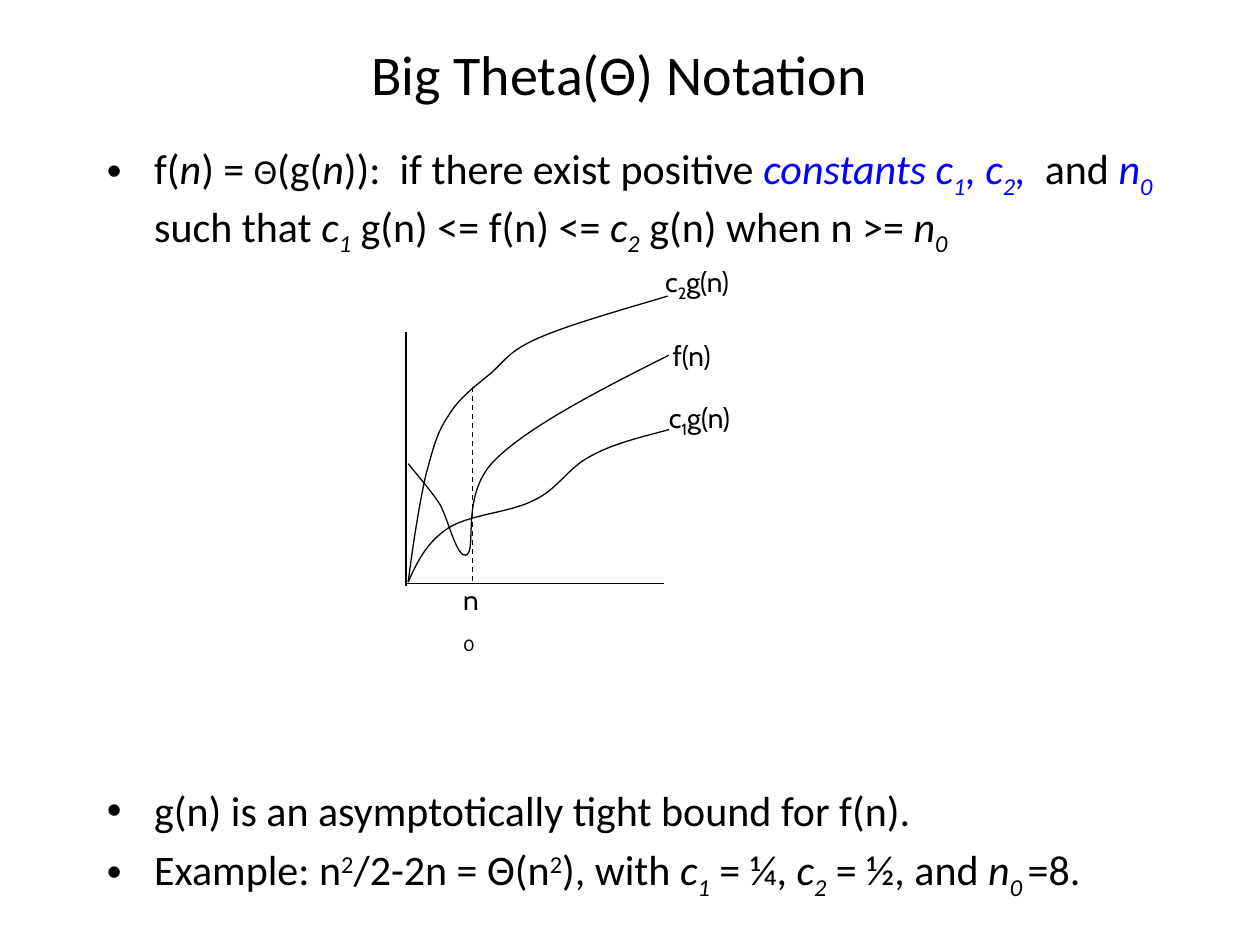
"""Build the Big Theta notation slide with its bounded-growth diagram."""
import dataclasses
import typing

import lxml.etree
import pptx
import pptx.dml.color
import pptx.enum.dml
import pptx.enum.shapes
import pptx.enum.text
import pptx.oxml.ns
import pptx.util

Pt = pptx.util.Pt
Point = tuple[float, float]


@dataclasses.dataclass(frozen=True)
class Theme:
    ink: str = "000000"
    accent: str = "0000FF"
    text_font: str = "Calibri"
    label_font: str = "Cabin"
    title_size: float = 32
    body_size: float = 24
    symbol_size: float = 20
    label_size: float = 16
    line_width: float = 0.75
    bullet_indent: float = 27
    bullet_gap: float = 4.8
    diagram_gap: float = 301.5


THEME = Theme()


class Span(typing.NamedTuple):
    text: str
    italic: bool = False
    baseline: int = 0
    color: str = THEME.ink
    size: float | None = None


class Paragraph(typing.NamedTuple):
    spans: list[Span]
    bulleted: bool = False
    format: dict = {}


class TextBlock(typing.NamedTuple):
    left: float
    top: float
    width: float
    height: float
    paragraphs: list[Paragraph]
    size: float = THEME.label_size
    font: str = THEME.label_font
    format: dict = {"word_wrap": False}


class Segment(typing.NamedTuple):
    start: Point
    end: Point
    dashed: bool = False


def apply_format(target: typing.Any, values: dict) -> None:
    for name, value in values.items():
        setattr(target, name, value)


def rgb(color: str) -> pptx.dml.color.RGBColor:
    return pptx.dml.color.RGBColor.from_string(color)


def constant(name: str, index: str, color: str = THEME.ink) -> list[Span]:
    return [Span(name, True, color=color), Span(index, True, -25, color)]


def label(name: str, index: str, *rest: str) -> list[Paragraph]:
    return [Paragraph([Span(name), Span(index, baseline=-25), *map(Span, rest)])]


def bullet(spans: list[Span], gap: float = THEME.bullet_gap) -> Paragraph:
    return Paragraph(spans, True, {"space_before": Pt(gap)})


def add_bullet(paragraph: typing.Any) -> None:
    properties = paragraph._p.get_or_add_pPr()
    properties.set("marL", str(Pt(THEME.bullet_indent)))
    properties.set("indent", str(-Pt(THEME.bullet_indent)))
    for tag, key, value in (("a:buFont", "typeface", "Arial"), ("a:buChar", "char", "•")):
        lxml.etree.SubElement(properties, pptx.oxml.ns.qn(tag)).set(key, value)


def add_text(slide: typing.Any, block: TextBlock) -> None:
    box = slide.shapes.add_textbox(Pt(block.left), Pt(block.top), Pt(block.width), Pt(block.height))
    frame = box.text_frame
    apply_format(frame, block.format)
    for position, content in enumerate(block.paragraphs):
        paragraph = frame.add_paragraph() if position else frame.paragraphs[0]
        apply_format(paragraph, content.format)
        if content.bulleted:
            add_bullet(paragraph)
        for span in content.spans:
            run = paragraph.add_run()
            run.text = span.text
            apply_format(run.font, {"name": block.font, "size": Pt(span.size or block.size),
                                    "italic": span.italic})
            run.font.color.rgb = rgb(span.color)
            if span.baseline:
                run._r.get_or_add_rPr().set("baseline", str(span.baseline * 1000))


def style_line(line: typing.Any) -> None:
    line.color.rgb = rgb(THEME.ink)
    line.width = Pt(THEME.line_width)


def add_segment(slide: typing.Any, segment: Segment) -> None:
    connector = slide.shapes.add_connector(
        pptx.enum.shapes.MSO_CONNECTOR.STRAIGHT,
        *(Pt(value) for value in segment.start + segment.end))
    style_line(connector.line)
    if segment.dashed:
        connector.line.dash_style = pptx.enum.dml.MSO_LINE.DASH
    lxml.etree.SubElement(connector._element.spPr, pptx.oxml.ns.qn("a:effectLst"))


def add_curve(slide: typing.Any, controls: list[Point]) -> None:
    start, *rest = [(Pt(x), Pt(y)) for x, y in controls]
    builder = slide.shapes.build_freeform(*start)
    builder.add_line_segments(rest, close=False)
    curve = builder.convert_to_shape()
    sides = list(curve._element.iter(pptx.oxml.ns.qn("a:lnTo")))
    for first in range(0, len(sides), 3):
        trio = sides[first:first + 3]
        cubic = lxml.etree.Element(pptx.oxml.ns.qn("a:cubicBezTo"))
        trio[0].addprevious(cubic)
        for side in trio:
            cubic.append(side[0])
            side.getparent().remove(side)
    curve.shadow.inherit = False
    curve.fill.background()
    style_line(curve.line)


DEFINITION = [
    Span("f("), Span("n", True), Span(") = "), Span("Θ", size=THEME.symbol_size),
    Span("(g("), Span("n", True), Span(")):  if there exist positive "),
    *constant("constants c", "1", THEME.accent), *constant(", c", "2", THEME.accent),
    Span(",  ", True, color=THEME.accent), Span("and "),
    *constant("n", "0", THEME.accent), Span(" such that "),
    *constant("c", "1"), Span(" g(n) <= f(n) <= "),
    *constant("c", "2"), Span(" g(n) when n >= "), *constant("n", "0"),
]
TIGHT_BOUND = [Span("g(n) is an asymptotically tight bound for f(n).")]
EXAMPLE = [
    Span("Example: n"), Span("2", baseline=30), Span("/2-2n = Θ(n"),
    Span("2", baseline=30), Span("), with "),
    *constant("c", "1"), Span(" = ¼, "), *constant("c", "2"),
    Span(" = ½, and "), *constant("n", "0 "), Span("=8."),
]

TITLE = TextBlock(
    48, 18, 612, 48,
    [Paragraph([Span("Big Theta(Θ) Notation")],
               format={"alignment": pptx.enum.text.PP_ALIGN.CENTER})],
    THEME.title_size, THEME.text_font,
    {"word_wrap": True, "vertical_anchor": pptx.enum.text.MSO_ANCHOR.MIDDLE})
BODY = TextBlock(
    54, 78, 636, 432,
    [bullet(DEFINITION), bullet(TIGHT_BOUND, THEME.diagram_gap), bullet(EXAMPLE)],
    THEME.body_size, THEME.text_font, {"word_wrap": True})
LABELS = [
    TextBlock(257.5, 329.6, 29, 26.6, label("n", "0"), format={"word_wrap": True}),
    TextBlock(373.7, 190, 46, 26.6, [Paragraph([Span(" f(n)")])]),
    TextBlock(375.1, 225.4, 57.6, 26.6, label("c", "1", "g(n)")),
    TextBlock(373, 147.6, 57.6, 26.6, label("c", "2", "g(n)")),
]

AXES = [
    Segment((232, 189.5), (232, 334.8)),
    Segment((232, 333.5), (379.2, 333.5)),
]
THRESHOLD = Segment((270, 221), (270, 333.5), dashed=True)

LOWER_BOUND = [
    (233.3, 332.6), (238.3, 321.1), (244.1, 309.6), (256.3, 301.7), (268.6, 293.8),
    (291.6, 293), (305.3, 285.8), (319, 279.4), (324.7, 267.1), (337.7, 260.6),
    (350.6, 253.4), (366.5, 249.8), (382.3, 245.5)]
UPPER_BOUND = [
    (233.3, 332.6), (236.2, 309.6), (239.8, 287.3), (243.4, 271.4), (247.7, 255.6),
    (249.8, 247), (256.3, 237.6), (262.1, 227.5), (272.2, 220.3), (280.8, 213.1),
    (289.4, 205.2), (291.6, 200.2), (308.2, 193), (324.7, 185.8), (352.8, 177.8),
    (381.6, 169.2)]
FUNCTION = [
    (233.3, 265), (239, 272.2), (245.5, 279.4), (251.3, 288), (256.3, 296.6),
    (261.4, 321.1), (267.1, 316.8), (272.2, 312.5), (263.5, 281.5), (283, 262.8),
    (301.7, 244.1), (342, 223.2), (382.3, 203)]


def main() -> None:
    deck = pptx.Presentation()
    apply_format(deck, {"slide_width": Pt(720), "slide_height": Pt(540)})
    slide = deck.slides.add_slide(deck.slide_layouts[6])
    for block in (TITLE, BODY):
        add_text(slide, block)
    for axis in AXES:
        add_segment(slide, axis)
    for controls in (LOWER_BOUND, UPPER_BOUND, FUNCTION):
        add_curve(slide, controls)
    add_segment(slide, THRESHOLD)
    for block in LABELS:
        add_text(slide, block)
    deck.save("out.pptx")


if __name__ == "__main__":
    main()
